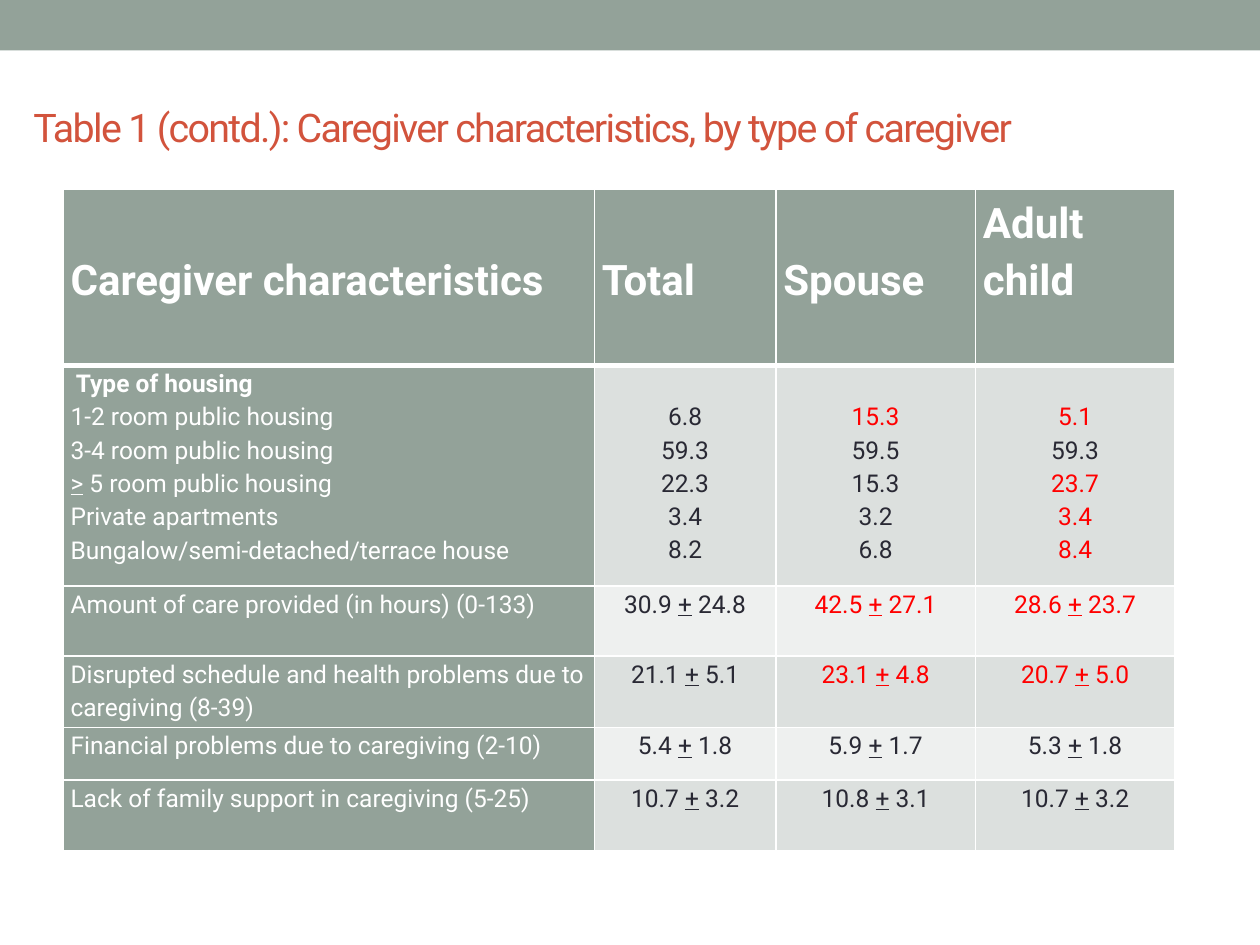
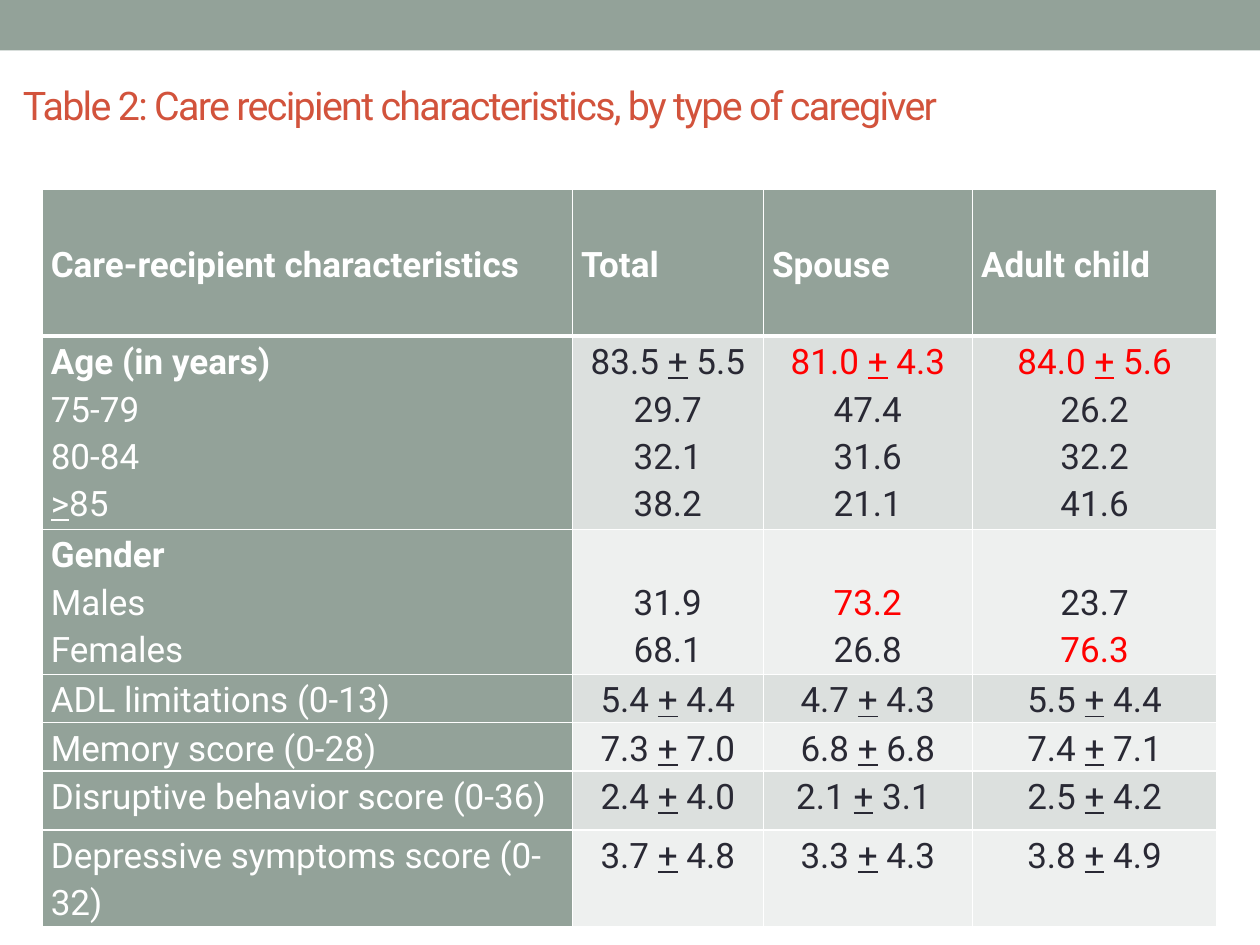
from pptx import Presentation
from pptx.dml.color import RGBColor
from pptx.enum.shapes import MSO_SHAPE
from pptx.enum.text import MSO_ANCHOR, PP_ALIGN
from pptx.oxml import parse_xml
from pptx.oxml.ns import nsdecls
from pptx.util import Inches, Pt

RECT = MSO_SHAPE.RECTANGLE
TOP, MID = MSO_ANCHOR.TOP, MSO_ANCHOR.MIDDLE
LEFT, MIDDLE = PP_ALIGN.LEFT, PP_ALIGN.CENTER

FONT = "Roboto"
SAGE, RUST, WHITE = "93A299", "D2533C", "FFFFFF"
INK, RED = "292934", "FF0000"
BANDS = ("DCE0DE", "EEF0EF")
UNIT = 1 / 12     # inches to one grid step; the slide is 120 by 90 steps
LEAD = 0.0188     # inches of line height for each point of text size


def paint(hue):
    return RGBColor.from_string(hue)


def step(count):
    return Inches(count * UNIT)


class Deck:
    def __init__(self):
        self.prs = Presentation()
        self.prs.slide_width = step(120)
        self.prs.slide_height = step(90)
        self.page = None

    def start(self):
        self.page = self.prs.slides.add_slide(self.prs.slide_layouts[6])
        band = self.page.shapes.add_shape(RECT, 0, 0, step(120), step(4.8))
        band.shadow.inherit = False
        band.fill.solid()
        band.fill.fore_color.rgb = paint(SAGE)
        band.line.fill.background()

    def run(self, para, text, size, hue, bold=False, under=False):
        run = para.add_run()
        run.text = text
        font = run.font
        font.name, font.size, font.bold = FONT, Pt(size), bold
        font.underline = under
        font.color.rgb = paint(hue)
        return run

    def title(self, text, left, top):
        box = self.page.shapes.add_textbox(
            step(left), step(top), step(118), step(8))
        frame = box.text_frame
        frame.word_wrap = True
        frame.vertical_anchor = MID
        frame.margin_top = Inches(0.22)
        run = self.run(frame.paragraphs[0], text, 22.5, RUST)
        run.font._element.set("spc", "-100")

    def line(self, para, text, size, hue, bold):
        """Write one line: a leading ! is red, a leading * is bold, and the
        signs + and > are underlined."""
        if text[0] == "!":
            text, hue = text[1:], RED
        if text[0] == "*":
            text, bold = text[1:], True
        sign = next((s for s in "+>" if s in text), "\n")
        for part in text.partition(sign):
            if part:
                self.run(para, part, size, hue, bold, part == sign)

    def edge(self, cell, sides):
        for side, width in sides.items():
            cell._tc.get_or_add_tcPr().append(parse_xml(
                f'<a:ln{side} {nsdecls("a")} w="{Pt(width)}"><a:solidFill>'
                f'<a:srgbClr val="{WHITE}"/></a:solidFill></a:ln{side}>'))

    def cell(self, cell, text, size, side, row, col, skip):
        """Fill a cell; skip is the number of line heights left free above."""
        head, label = row == 0, col == 0
        cell.margin_left = cell.margin_right = Inches(side)
        cell.margin_top = Inches(skip * size * LEAD)
        cell.margin_bottom = 0
        cell.vertical_anchor = MID if head else TOP
        self.edge(cell, {"L": 1, "R": 1, "T": 3 if row == 1 else 1,
                         "B": 3 if head else 1})
        cell.fill.solid()
        back = SAGE if head or label else BANDS[(row - 1) % 2]
        cell.fill.fore_color.rgb = paint(back)
        frame = cell.text_frame
        for num, text in enumerate(text.split("\n")):
            para = frame.add_paragraph() if num else frame.paragraphs[0]
            para.alignment = LEFT if head or label else MIDDLE
            para.line_spacing = 1.15
            self.line(para, text, size, WHITE if back == SAGE else INK, head)

    def table(self, left, top, cols, rows, data, sizes, side):
        """Draw a table; sizes holds the text size of the head and the body."""
        shape = self.page.shapes.add_table(
            len(rows), len(cols), step(left), step(top),
            step(sum(cols)), step(sum(rows)))
        table = shape.table
        table.first_row = table.horz_banding = False
        for col, width in zip(table.columns, cols):
            col.width = step(width)
        for row, height in zip(table.rows, rows):
            row.height = step(height)
        for r, texts in enumerate(data):
            for c, text in enumerate(texts):
                skip = texts[0].count("\n") - text.count("\n")
                self.cell(table.cell(r, c), text, sizes[r > 0], side,
                          r, c, skip)
        return table


GIVERS = [
    ("Caregiver characteristics", "Total", "Spouse", "Adult child"),
    ("* Type of housing\n1-2 room public housing\n3-4 room public housing\n"
     "> 5 room public housing\nPrivate apartments\n"
     "Bungalow/semi-detached/terrace house",
     "6.8\n59.3\n22.3\n3.4\n8.2",
     "!15.3\n59.5\n15.3\n3.2\n6.8",
     "!5.1\n59.3\n!23.7\n!3.4\n!8.4"),
    ("Amount of care provided (in hours) (0-133)",
     "30.9 + 24.8", "!42.5 + 27.1", "!28.6 + 23.7"),
    ("Disrupted schedule and health problems due to caregiving (8-39)",
     "21.1 + 5.1", "!23.1 + 4.8", "!20.7 + 5.0"),
    ("Financial problems due to caregiving (2-10)",
     "5.4 + 1.8", "5.9 + 1.7", "5.3 + 1.8"),
    ("Lack of family support in caregiving (5-25)",
     "10.7 + 3.2", "10.8 + 3.1", "10.7 + 3.2"),
]

CARED = [
    ("Care-recipient characteristics", "Total", "Spouse", "Adult child"),
    ("*Age (in years)\n75-79\n80-84\n>85",
     "83.5 + 5.5\n29.7\n32.1\n38.2",
     "!81.0 + 4.3\n47.4\n31.6\n21.1",
     "!84.0 + 5.6\n26.2\n32.2\n41.6"),
    ("*Gender\nMales\nFemales",
     "31.9\n68.1", "!73.2\n26.8", "23.7\n!76.3"),
    ("ADL limitations (0-13)", "5.4 + 4.4", "4.7 + 4.3", "5.5 + 4.4"),
    ("Memory score (0-28)", "7.3 + 7.0", "6.8 + 6.8", "7.4 + 7.1"),
    ("Disruptive behavior score (0-36)",
     "2.4 + 4.0", "2.1 + 3.1 ", "2.5 + 4.2"),
    ("Depressive symptoms score (0-32)",
     "3.7 + 4.8", "3.3 + 4.3", "3.8 + 4.9"),
]


def main():
    deck = Deck()

    deck.start()
    table = deck.table(6, 18, (50.6, 17.3, 19, 19),
                       (16.8, 21, 6.7, 6.8, 5, 6.7), GIVERS, (24, 14), 0.06)
    # The two-line heading sits one line height above the others.
    table.cell(0, 3).margin_bottom = Inches(24 * LEAD)
    deck.title("Table 1 (contd.): Caregiver characteristics, "
               "by type of caregiver", 2, 7)

    deck.start()
    deck.table(4, 18, (50.5, 18.2, 19.9, 23.3),
               (14, 18, 13.5, 4.5, 4.5, 5.6, 9), CARED, (20, 20), 0.07)
    deck.title("Table 2: Care recipient characteristics, "
               "by type of caregiver", 1, 5)

    deck.prs.save("out.pptx")


if __name__ == "__main__":
    main()
